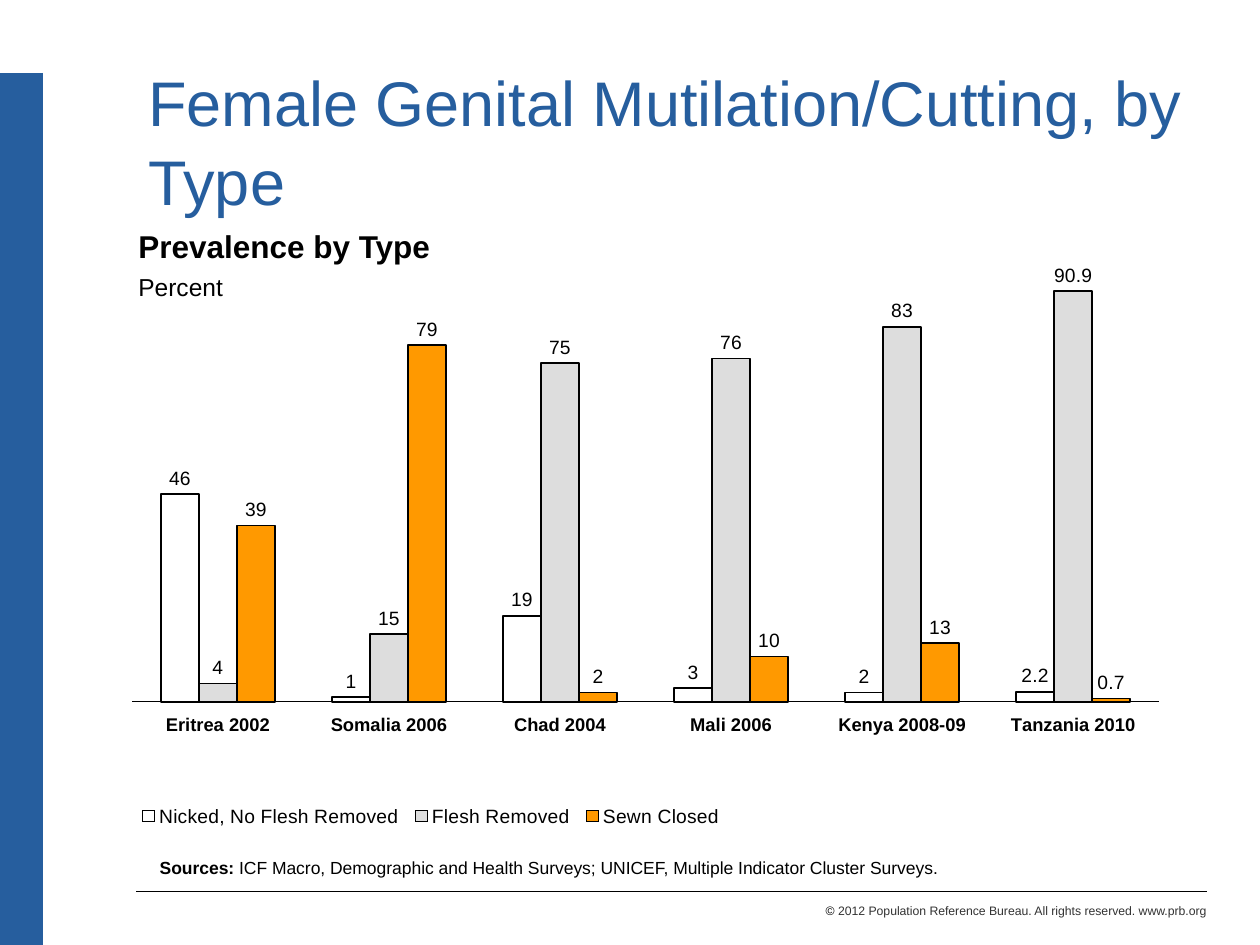
from dataclasses import dataclass

from lxml.etree import SubElement
from pptx import Presentation
from pptx.chart.data import CategoryChartData
from pptx.dml.color import RGBColor
from pptx.enum.chart import XL_CHART_TYPE as ChartType
from pptx.enum.chart import XL_LABEL_POSITION as LabelPosition
from pptx.enum.chart import XL_LEGEND_POSITION as LegendPosition
from pptx.enum.chart import XL_TICK_LABEL_POSITION as TickLabelPosition
from pptx.enum.chart import XL_TICK_MARK as TickMark
from pptx.enum.shapes import MSO_CONNECTOR as Connector
from pptx.enum.text import MSO_ANCHOR as Anchor
from pptx.enum.text import PP_ALIGN as Align
from pptx.oxml import parse_xml
from pptx.oxml.ns import nsdecls, qn
from pptx.util import Cm, Pt

BLUE = RGBColor(0x26, 0x5E, 0x9E)
BLACK = RGBColor(0, 0, 0)
CHARCOAL = RGBColor(0x33, 0x33, 0x33)
WHITE = RGBColor(0xFF, 0xFF, 0xFF)
GREY = RGBColor(0xDD, 0xDD, 0xDD)
ORANGE = RGBColor(0xFF, 0x99, 0x00)
FONT = "Arial"


@dataclass(frozen=True)
class Box:
    left: float
    top: float
    width: float
    height: float

    def lengths(self) -> tuple:
        return Cm(self.left), Cm(self.top), Cm(self.width), Cm(self.height)


@dataclass(frozen=True)
class Rule:
    start: tuple[float, float]
    end: tuple[float, float]
    color: RGBColor
    weight: float


@dataclass(frozen=True)
class Phrase:
    text: str
    bold: bool = False
    color: RGBColor = BLACK


@dataclass(frozen=True)
class Line:
    phrases: tuple[Phrase, ...]
    size: float
    align: Align = Align.LEFT
    space_before: float = 0


@dataclass(frozen=True)
class CuttingType:
    name: str
    percents: tuple[float, ...]
    color: RGBColor


RULES = (
    Rule((0.43, 1.47), (0.43, 19.05), BLUE, 25),
    Rule((24.33, 17.98), (2.74, 17.98), BLACK, 0.5),
)
TEXTS = (
    (Box(10.8, 18.08, 13.77, 0.56), (
        Line((Phrase("© "), Phrase(
            "2012 Population Reference Bureau. All rights reserved. www.prb.org",
            color=CHARCOAL)), 7, Align.RIGHT),
    )),
    (Box(2.54, 4.45, 21.59, 1.73), (
        Line((Phrase("Prevalence by Type", True),), 18),
        Line((Phrase("Percent"),), 14, space_before=4),
    )),
    (Box(2.97, 17.15, 21.79, 0.69), (
        Line((Phrase("Sources: ", True), Phrase(
            "ICF Macro, Demographic and Health Surveys; UNICEF, "
            "Multiple Indicator Cluster Surveys.")), 10),
    )),
)
SURVEYS = ("Eritrea 2002", "Somalia 2006", "Chad 2004",
           "Mali 2006", "Kenya 2008-09", "Tanzania 2010")
CUTTING_TYPES = (
    CuttingType("Nicked, No Flesh Removed", (46, 1, 19, 3, 2, 2.2), WHITE),
    CuttingType("Flesh Removed", (4, 15, 75, 76, 83, 90.9), GREY),
    CuttingType("Sewn Closed", (39, 79, 2, 10, 13, 0.7), ORANGE),
)


def set_font(font, size: float, color: RGBColor = BLACK, bold: bool = False) -> None:
    font.name = FONT
    font.size = Pt(size)
    font.color.rgb = color
    font.bold = bold


def draw_rule(slide, rule: Rule) -> None:
    (x1, y1), (x2, y2) = rule.start, rule.end
    connector = slide.shapes.add_connector(
        Connector.STRAIGHT, Cm(x1), Cm(y1), Cm(x2), Cm(y2))
    connector.line.color.rgb = rule.color
    connector.line.width = Pt(rule.weight)
    SubElement(connector.element.spPr, qn("a:effectLst"))


def draw_text(slide, box: Box, lines: tuple[Line, ...]) -> None:
    frame = slide.shapes.add_textbox(*box.lengths()).text_frame
    frame.word_wrap = True
    for index, line in enumerate(lines):
        paragraph = frame.add_paragraph() if index else frame.paragraphs[0]
        paragraph.alignment = line.align
        paragraph.space_before = Pt(line.space_before)
        paragraph.font.name = FONT
        paragraph.font.size = Pt(line.size)
        for phrase in line.phrases:
            run = paragraph.add_run()
            run.text = phrase.text
            run.font.bold = phrase.bold
            run.font.color.rgb = phrase.color


def draw_title(slide, box: Box, text: str) -> None:
    title = slide.shapes.title
    title.left, title.top, title.width, title.height = box.lengths()
    frame = title.text_frame
    frame.text = text
    frame.word_wrap = True
    frame.vertical_anchor = Anchor.TOP
    paragraph = frame.paragraphs[0]
    paragraph.alignment = Align.LEFT
    paragraph.line_spacing = 1.05
    set_font(paragraph.font, 36, BLUE)


def manual_layout(x: float, y: float, w: float, h: float, inner: bool = False):
    target = '<c:layoutTarget val="inner"/>' if inner else ""
    return parse_xml(
        f'<c:layout {nsdecls("c")}><c:manualLayout>{target}'
        '<c:xMode val="edge"/><c:yMode val="edge"/>'
        f'<c:x val="{x}"/><c:y val="{y}"/><c:w val="{w}"/><c:h val="{h}"/>'
        '</c:manualLayout></c:layout>')


def draw_chart(slide, box: Box) -> None:
    data = CategoryChartData()
    data.categories = SURVEYS
    for cutting in CUTTING_TYPES:
        data.add_series(cutting.name, cutting.percents)
    chart = slide.shapes.add_chart(
        ChartType.COLUMN_CLUSTERED, *box.lengths(), data).chart
    chart.has_title = False
    set_font(chart.font, 14, bold=True)

    percent_axis = chart.value_axis
    percent_axis.minimum_scale = 0
    percent_axis.maximum_scale = 100
    percent_axis.has_major_gridlines = False
    percent_axis.visible = False

    survey_axis = chart.category_axis
    survey_axis.major_tick_mark = TickMark.NONE
    survey_axis.minor_tick_mark = TickMark.NONE
    survey_axis.tick_label_position = TickLabelPosition.LOW
    survey_axis.format.line.color.rgb = BLACK
    survey_axis.format.line.width = Pt(0.25)
    set_font(survey_axis.tick_labels.font, 10.5, bold=True)

    plot = chart.plots[0]
    plot.gap_width = 150
    plot.overlap = 0
    plot.vary_by_categories = False
    for series, cutting in zip(plot.series, CUTTING_TYPES):
        series.invert_if_negative = False
        series.format.fill.solid()
        series.format.fill.fore_color.rgb = cutting.color
        series.format.line.color.rgb = BLACK
        series.format.line.width = Pt(1)
        labels = series.data_labels
        labels.show_value = True
        labels.position = LabelPosition.OUTSIDE_END
        set_font(labels.font, 11)

    chart.has_legend = True
    legend = chart.legend
    legend.position = LegendPosition.BOTTOM
    legend.include_in_layout = False
    set_font(legend.font, 11)

    plot_area = chart.element.find(".//" + qn("c:plotArea"))
    for area in (plot_area, chart.element.find(".//" + qn("c:legend"))):
        for layout in area.findall(qn("c:layout")):
            area.remove(layout)
    plot_area.insert(0, manual_layout(0.01, 0.02, 0.98, 0.75, inner=True))
    legend_position = chart.element.find(".//" + qn("c:legendPos"))
    legend_position.addnext(manual_layout(0.01, 0.93, 0.57, 0.06))


def main() -> None:
    deck = Presentation()
    deck.slide_width, deck.slide_height = Cm(25.4), Cm(19.05)
    slide = deck.slides.add_slide(deck.slide_layouts[5])
    for rule in RULES:
        draw_rule(slide, rule)
    draw_title(slide, Box(2.74, 1.07, 21.49, 2.74),
               "Female Genital Mutilation/Cutting, by Type")
    draw_chart(slide, Box(2.46, 4.8, 21.11, 12.14))
    for box, lines in TEXTS:
        draw_text(slide, box, lines)
    deck.save("out.pptx")


if __name__ == "__main__":
    main()
